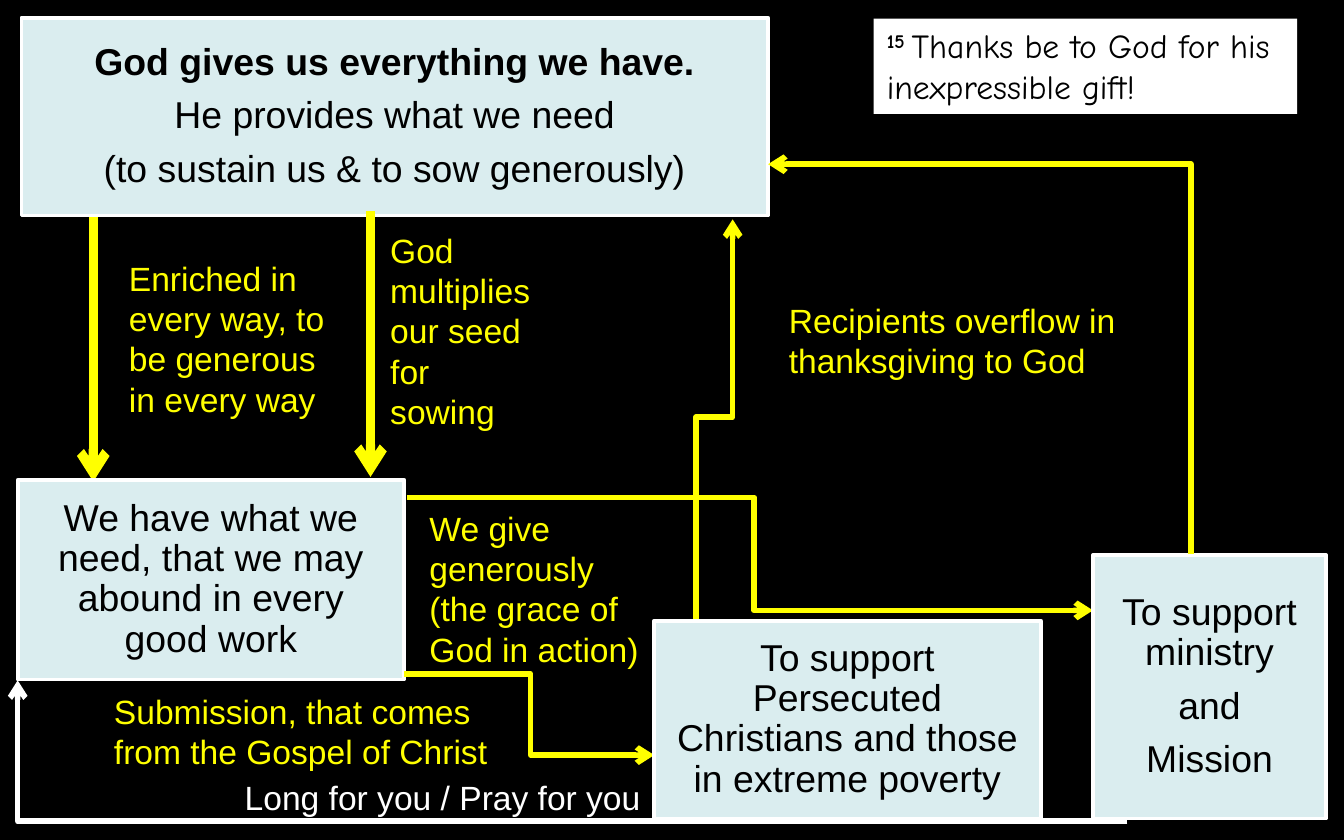
import pptx
import pptx.util
import pptx.dml.color
import pptx.enum.shapes
import pptx.enum.text
import pptx.oxml.ns
import lxml.etree

Pt = pptx.util.Pt
COLOURS = {"black": "000000", "white": "FFFFFF", "yellow": "FFFF00", "panel": "DAEDEF"}


def colour(name):
    return pptx.dml.color.RGBColor.from_string(COLOURS[name])


def add_element(parent, tag, **attributes):
    return lxml.etree.SubElement(parent, pptx.oxml.ns.qn(tag), **attributes)


class FlowSlide:
    font = "Arial"
    box_size = 20
    label_size = 18

    def __init__(self, deck):
        self.slide = deck.slides.add_slide(deck.slide_layouts[6])
        self.shapes = self.slide.shapes
        self.slide.background.fill.solid()
        self.slide.background.fill.fore_color.rgb = colour("black")

    def span(self, para, text, size, tint, bold=False, font=None):
        span = para.add_run()
        span.text = text
        span.font.name = font or self.font
        span.font.size = Pt(size)
        span.font.bold = bold
        span.font.color.rgb = colour(tint)
        return span

    def rectangle(self, bounds, fill):
        box = self.shapes.add_shape(
            pptx.enum.shapes.MSO_SHAPE.RECTANGLE, *map(Pt, bounds))
        box.shadow.inherit = False
        box.fill.solid()
        box.fill.fore_color.rgb = colour(fill)
        box.line.fill.background()
        box.text_frame.word_wrap = True
        return box

    def panel(self, bounds, lines, bold_first=False):
        box = self.rectangle(bounds, "panel")
        box.line.color.rgb = colour("white")
        box.line.width = Pt(2)
        frame = box.text_frame
        frame.vertical_anchor = pptx.enum.text.MSO_ANCHOR.MIDDLE
        frame.margin_left = frame.margin_right = Pt(11.5)
        frame.margin_top = frame.margin_bottom = Pt(11.5)
        for index, line in enumerate(lines):
            para = frame.add_paragraph() if index else frame.paragraphs[0]
            para.alignment = pptx.enum.text.PP_ALIGN.CENTER
            para.line_spacing = 0.9
            para.space_after = Pt(7)
            self.span(para, line, self.box_size, "black", bold_first and index == 0)

    def label(self, bounds, text, tint="yellow"):
        box = self.shapes.add_textbox(*map(Pt, bounds))
        box.text_frame.word_wrap = True
        box.text_frame.auto_size = pptx.enum.text.MSO_AUTO_SIZE.SHAPE_TO_FIT_TEXT
        self.span(box.text_frame.paragraphs[0], text, self.label_size, tint)

    def verse(self, bounds, number, text):
        box = self.rectangle(bounds, "white")
        box.text_frame.vertical_anchor = pptx.enum.text.MSO_ANCHOR.TOP
        para = box.text_frame.paragraphs[0]
        para.alignment = pptx.enum.text.PP_ALIGN.LEFT
        mark = self.span(para, number, self.label_size, "black", True, "Comic Neue")
        mark.font._element.set("baseline", "30000")
        self.span(para, text, self.label_size, "black", font="Comic Neue")

    def finish_arrow(self, shape, tint, width):
        shape.line.color.rgb = colour(tint)
        shape.line.width = Pt(width)
        add_element(shape.line._get_or_add_ln(), "a:tailEnd", type="arrow")
        add_element(shape._element.spPr, "a:effectLst")

    def arrow(self, start, end, width=5):
        kind = pptx.enum.shapes.MSO_CONNECTOR.STRAIGHT
        line = self.shapes.add_connector(kind, *map(Pt, start + end))
        self.finish_arrow(line, "yellow", width)

    def elbow(self, start, end, bend, tint="yellow"):
        kind = pptx.enum.shapes.MSO_CONNECTOR.ELBOW
        line = self.shapes.add_connector(kind, *map(Pt, start + end))
        geometry = line._element.spPr.find(pptx.oxml.ns.qn("a:prstGeom"))
        guides = geometry.find(pptx.oxml.ns.qn("a:avLst"))
        if guides is None:
            guides = add_element(geometry, "a:avLst")
        add_element(guides, "a:gd", name="adj1", fmla=f"val {round(bend * 100000)}")
        self.finish_arrow(line, tint, 3)

    def route(self, points):
        start, *corners = [tuple(map(Pt, point)) for point in points]
        builder = self.shapes.build_freeform(*start)
        builder.add_line_segments(corners, close=False)
        line = builder.convert_to_shape()
        line.fill.background()
        self.finish_arrow(line, "yellow", 3)


def main():
    deck = pptx.Presentation()
    deck.slide_width, deck.slide_height = Pt(720), Pt(450)
    flow = FlowSlide(deck)

    flow.arrow((50, 116), (50, 258))
    flow.panel((11.5, 9.5, 400, 106),
               ["God gives us everything we have.", "He provides what we need",
                "(to sustain us & to sow generously)"], bold_first=True)
    flow.elbow((218, 266.5), (585.5, 327), 0.506)
    flow.panel((9.5, 257, 207, 107),
               ["We have what we need, that we may abound in every good work"])
    flow.panel((585.5, 297.5, 125, 141), ["To support ministry", "and", "Mission"])
    flow.elbow((216.5, 361), (350.5, 404.5), 0.506)
    flow.panel((350.5, 332.5, 207, 106),
               ["To support Persecuted Christians and those in extreme poverty"])
    flow.route([(373, 331.5), (373, 223.5), (392.5, 223.5), (392.5, 117.5)])
    flow.elbow((638, 297), (411.5, 88), 0)
    flow.arrow((198.5, 113), (198.5, 255.5))
    flow.elbow((604, 440), (9.5, 364.5), 1, "white")

    flow.label((62, 134.5, 124.5, 94.5),
               "Enriched in every way, to be generous in every way")
    flow.label((223, 268.5, 129, 94.5),
               "We give generously (the grace of God in action)")
    flow.label((415.5, 157, 196.5, 51), "Recipients overflow in thanksgiving to God")
    flow.label((54, 366.5, 221, 51), "Submission, that comes from the Gospel of Christ")
    flow.label((202, 119.5, 94.5, 116.5), "God multiplies our seed for sowing")
    flow.label((124, 412.5, 331, 29), "Long for you / Pray for you", "white")
    flow.verse((468, 10, 227, 51), "15\u00a0", "Thanks be to God for his inexpressible gift!")

    deck.save("out.pptx")


if __name__ == "__main__":
    main()
